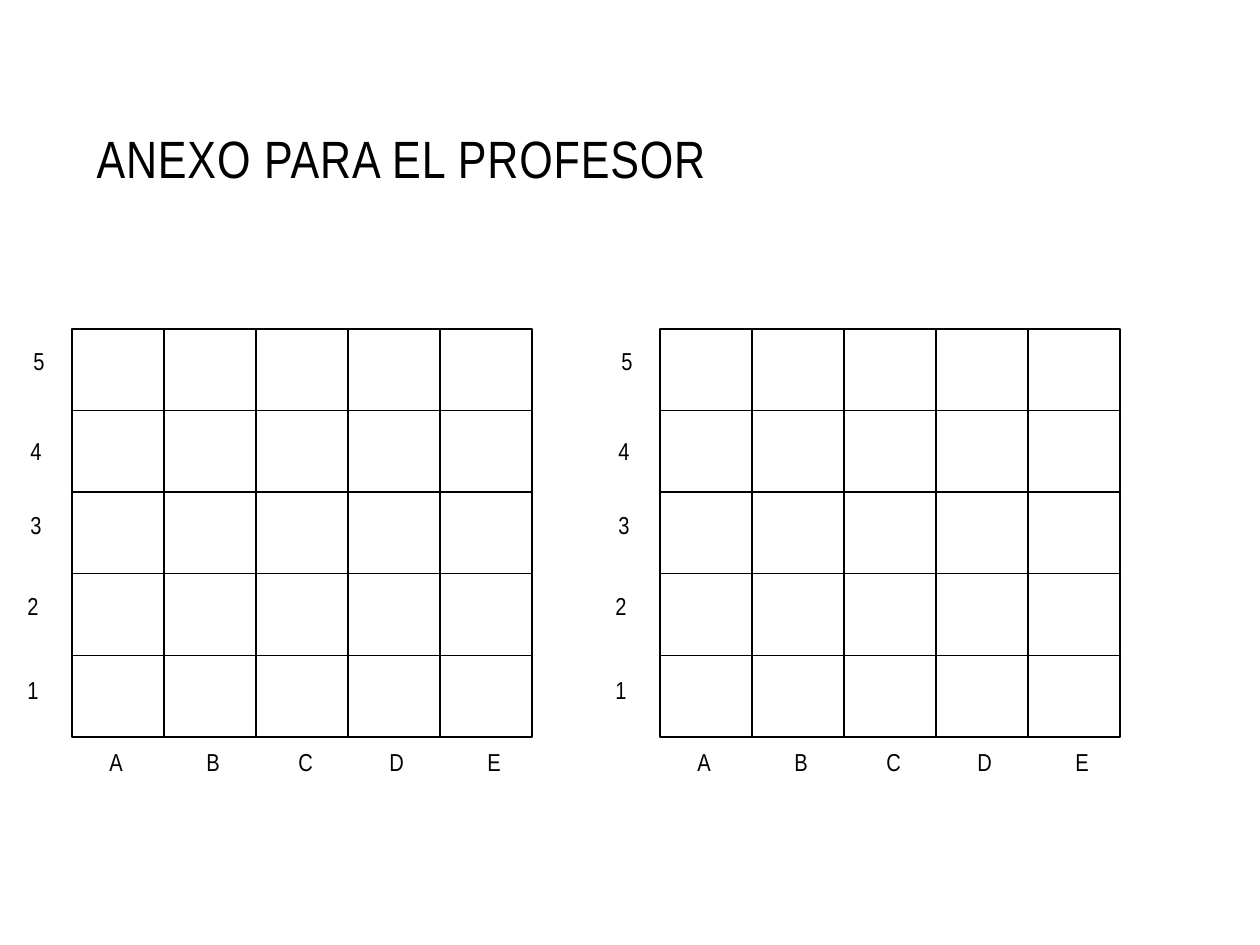
"""Build the teacher's annex slide with two lettered and numbered 5 by 5 grids."""
from pptx import Presentation
from pptx.dml.color import RGBColor
from pptx.enum.shapes import MSO_SHAPE
from pptx.enum.text import MSO_ANCHOR, MSO_AUTO_SIZE, PP_ALIGN
from pptx.util import Pt

RECT = MSO_SHAPE.RECTANGLE
BOTTOM = MSO_ANCHOR.BOTTOM
GROW = MSO_AUTO_SIZE.SHAPE_TO_FIT_TEXT
LEFT = PP_ALIGN.LEFT
SCALE = 914400 / 126
BLACK = "000000"
FONT = "Arial Narrow"
SIDE = 5
CELL = 92
HIGH = 408
LABELS = [
    ("A", 97, 741, 38), ("B", 194, 741, 39), ("C", 286, 741, 40),
    ("D", 377, 741, 40), ("E", 475, 741, 39),
    ("5", 21, 340, 36), ("4", 18, 430, 36), ("3", 18, 504, 36),
    ("2", 15, 585, 36), ("1", 15, 669, 36),
]


def place(*sizes):
    return [round(size * SCALE) for size in sizes]


def style(run, size):
    run.font.name = FONT
    run.font.size = Pt(size)
    run.font.color.rgb = RGBColor.from_string(BLACK)


deck = Presentation()
deck.slide_width, deck.slide_height = place(1260, 945)
slide = deck.slides.add_slide(deck.slide_layouts[5])

title = slide.shapes.title
title.left, title.top, title.width, title.height = place(84, 38, 1092, 157)
frame = title.text_frame
frame.text = "ANEXO PARA EL PROFESOR"
frame.vertical_anchor = BOTTOM
line = frame.paragraphs[0]
line.alignment = LEFT
style(line.runs[0], 30)
line.runs[0].font._element.set("spc", "50")

for shift in (0, 588):
    group = slide.shapes.add_group_shape()
    for row in range(SIDE):
        top = 329 + row * HIGH / SIDE
        for col in range(SIDE):
            spot = place(72 + shift + col * CELL, top, CELL, HIGH / SIDE)
            cell = group.shapes.add_shape(RECT, *spot)
            cell.shadow.inherit = False
            cell.fill.background()
            cell.line.color.rgb = RGBColor.from_string(BLACK)
            cell.line.width = Pt(0.75)
    for text, left, top, width in LABELS:
        label = group.shapes.add_textbox(*place(left + shift, top, width, 43))
        frame = label.text_frame
        frame.text = text
        frame.word_wrap = False
        frame.auto_size = GROW
        style(frame.paragraphs[0].runs[0], 14)

deck.save("out.pptx")
